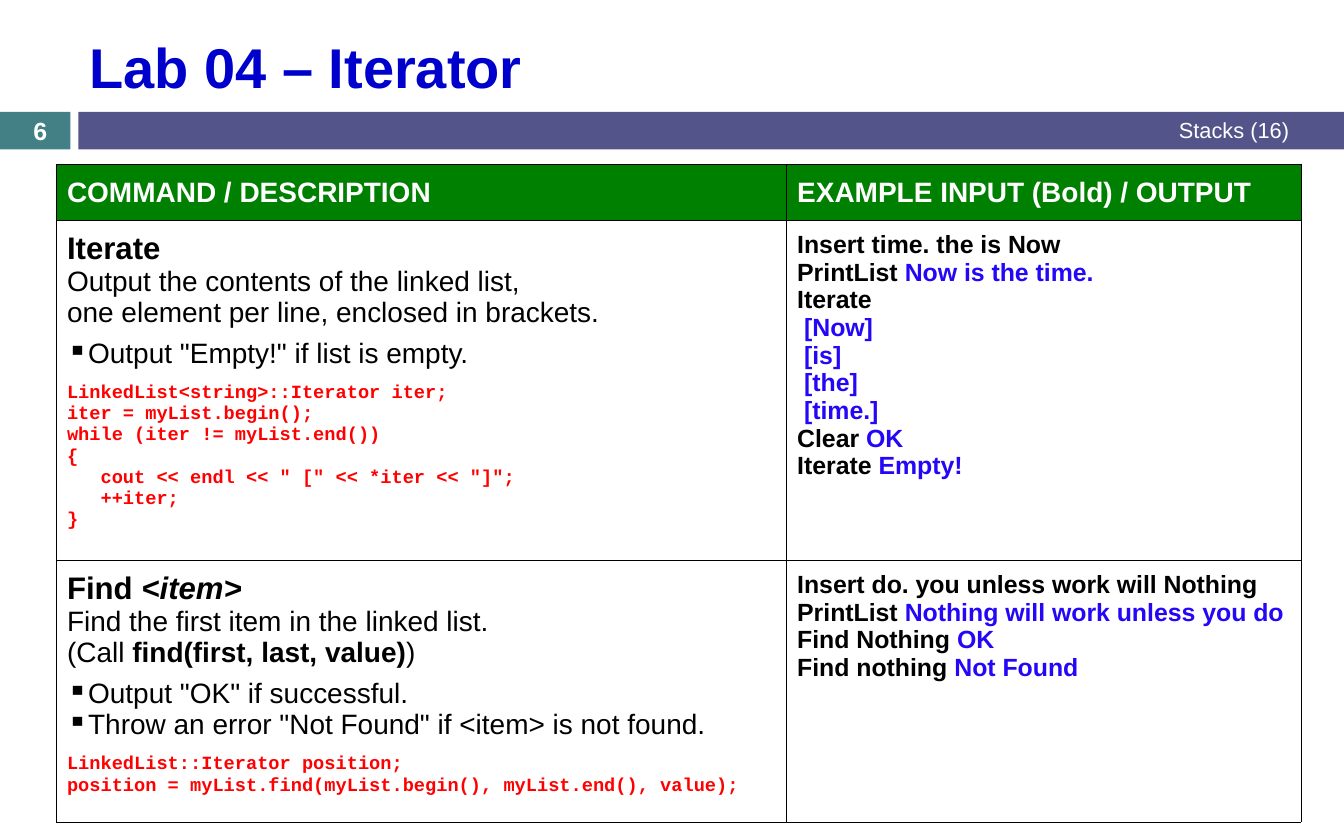
from lxml import etree
from pptx import Presentation
from pptx.dml.color import RGBColor
from pptx.enum import shapes, text
from pptx.oxml import ns
from pptx.util import Cm, Pt

BLACK = RGBColor(0x00, 0x00, 0x00)
WHITE = RGBColor(0xFF, 0xFF, 0xFF)
RED = RGBColor(0xFF, 0x00, 0x00)
GREEN = RGBColor(0x00, 0x80, 0x00)
TITLE_BLUE = RGBColor(0x00, 0x00, 0xCC)
OUTPUT_BLUE = RGBColor(0x24, 0x07, 0xF7)
TEAL = RGBColor(0x43, 0x80, 0x86)
PURPLE = RGBColor(0x53, 0x54, 0x8A)

# Run styles: size, font, colour, bold, italic
STYLES = {
    "title": (36, "Arial", TITLE_BLUE, True, False),
    "section": (14, "Arial", WHITE, False, False),
    "number": (16, "Arial", WHITE, True, False),
    "header": (18, "Arial", WHITE, True, False),
    "command": (20, "Arial", BLACK, True, False),
    "argument": (20, "Arial", BLACK, True, True),
    "body": (18, "Arial", BLACK, False, False),
    "strong": (18, "Arial", BLACK, True, False),
    "code": (12, "Courier New", RED, True, False),
    "input": (16, "Arial", BLACK, True, False),
    "output": (16, "Arial", OUTPUT_BLUE, True, False),
}

# Content: each command has a description, bullets, code and an example session
TITLE, SECTION, NUMBER = "Lab 04 – Iterator", "Stacks (16)", "6"
HEADERS = ["COMMAND / DESCRIPTION", "EXAMPLE INPUT (Bold) / OUTPUT"]
ITERATE = {
    "intro": [("Iterate\n", "command"),
              ("Output the contents of the linked list,\n"
               "one element per line, enclosed in brackets.", "body")],
    "bullets": ['Output "Empty!" if list is empty.'],
    "code": ["LinkedList<string>::Iterator iter;",
             "iter = myList.begin();",
             "while (iter != myList.end())",
             "{",
             '   cout << endl << " [" << *iter << "]";',
             "   ++iter;",
             "}"],
    "session": [("Insert time. the is Now", ""),
                ("PrintList ", "Now is the time."),
                ("Iterate", ""),
                ("", " [Now]"), ("", " [is]"), ("", " [the]"), ("", " [time.]"),
                ("Clear ", "OK"),
                ("Iterate ", "Empty!")],
}
FIND = {
    "intro": [("Find ", "command"), ("<item>\n", "argument"),
              ("Find the first item in the linked list.\n(Call ", "body"),
              ("find(first, last, value)", "strong"), (")", "body")],
    "bullets": ['Output "OK" if successful.',
                'Throw an error "Not Found" if <item> is not found.'],
    "code": ["LinkedList::Iterator position;",
             "position = myList.find(myList.begin(), myList.end(), value);"],
    "session": [("Insert do. you unless work will Nothing", ""),
                ("PrintList ", "Nothing will work unless you do"),
                ("Find Nothing ", "OK"),
                ("Find nothing ", "Not Found")],
}

# Geometry in centimetres
COLUMNS = [16.56, 11.68]
TABLE_LEFT = 1.27
HEADER_HEIGHT = 1.22
BULLET_INDENT = Cm(0.48)


def write(paragraph, spans):
    for words, style in spans:
        size, font, colour, bold, italic = STYLES[style]
        for i, line in enumerate(words.split("\n")):
            if i:
                paragraph.add_line_break()
            if not line:
                continue
            run = paragraph.add_run()
            run.text = line
            run.font.size, run.font.name = Pt(size), font
            run.font.bold, run.font.italic = bold, italic
            run.font.color.rgb = colour


def add_bullet(paragraph):
    props = paragraph._p.get_or_add_pPr()
    props.set("marL", str(BULLET_INDENT))
    props.set("indent", str(-BULLET_INDENT))
    etree.SubElement(props, ns.qn("a:buChar")).set("char", "▪")


def next_paragraph(frame):
    first = frame.paragraphs[0]
    return frame.add_paragraph() if first.runs else first


def add_bar(slide, left, width, colour):
    bar = slide.shapes.add_shape(shapes.MSO_SHAPE.RECTANGLE,
                                 Cm(left), Cm(2.54), Cm(width), Cm(0.85))
    bar.shadow.inherit = False
    bar.fill.solid()
    bar.fill.fore_color.rgb = colour
    bar.line.fill.background()


def add_label(slide, box, words, style, align):
    frame = slide.shapes.add_textbox(*map(Cm, box)).text_frame
    frame.word_wrap = True
    frame.vertical_anchor = text.MSO_ANCHOR.MIDDLE
    frame.paragraphs[0].alignment = align
    write(frame.paragraphs[0], [(words, style)])


def format_cell(cell, fill):
    cell.margin_left = cell.margin_right = Cm(0.25)
    cell.margin_top = cell.margin_bottom = Cm(0.25)
    props = cell._tc.get_or_add_tcPr()
    for side in ("lnL", "lnR", "lnT", "lnB"):
        border = etree.SubElement(props, ns.qn("a:" + side), w=str(Pt(0.3)))
        solid = etree.SubElement(border, ns.qn("a:solidFill"))
        etree.SubElement(solid, ns.qn("a:srgbClr"), val=str(BLACK))
    cell.fill.solid()
    cell.fill.fore_color.rgb = fill


def add_table(slide, top, heights):
    table = slide.shapes.add_table(
        len(heights), len(COLUMNS), Cm(TABLE_LEFT), Cm(top),
        Cm(sum(COLUMNS)), Cm(sum(heights))).table
    table.first_row = table.horz_banding = False
    for column, width in zip(table.columns, COLUMNS):
        column.width = Cm(width)
    for row, height in zip(table.rows, heights):
        row.height = Cm(height)
    return table


def fill_command(row, command):
    description, example = row.cells
    for cell in row.cells:
        format_cell(cell, WHITE)

    frame = description.text_frame
    intro = frame.paragraphs[0]
    write(intro, command["intro"])
    intro.space_after = Pt(6)
    for words in command["bullets"]:
        paragraph = next_paragraph(frame)
        write(paragraph, [(words, "body")])
        add_bullet(paragraph)
    for i, line in enumerate(command["code"]):
        paragraph = next_paragraph(frame)
        write(paragraph, [(line, "code")])
        if i == 0:
            paragraph.space_before = Pt(9)

    for typed, printed in command["session"]:
        write(next_paragraph(example.text_frame),
              [(typed, "input"), (printed, "output")])


def main():
    deck = Presentation()
    deck.slide_width, deck.slide_height = Cm(30.48), Cm(19.05)
    slide = deck.slides.add_slide(deck.slide_layouts[6])

    # Title and band
    add_bar(slide, 0, 1.6, TEAL)
    add_bar(slide, 1.78, 28.7, PURPLE)
    add_label(slide, (1.78, 0.48, 27.71, 2.03), TITLE, "title", text.PP_ALIGN.LEFT)
    add_label(slide, (11.43, 2.51, 18.06, 0.89), SECTION, "section", text.PP_ALIGN.RIGHT)
    add_label(slide, (0, 2.57, 1.83, 0.76), NUMBER, "number", text.PP_ALIGN.CENTER)

    # Iterate table with the header row
    iterate = add_table(slide, 3.73, [HEADER_HEIGHT, 7.3])
    for cell, words in zip(iterate.rows[0].cells, HEADERS):
        format_cell(cell, GREEN)
        cell.vertical_anchor = text.MSO_ANCHOR.MIDDLE
        write(cell.text_frame.paragraphs[0], [(words, "header")])
    fill_command(iterate.rows[1], ITERATE)

    # Find table
    find = add_table(slide, 12.7, [5.62])
    fill_command(find.rows[0], FIND)

    deck.save("out.pptx")


if __name__ == "__main__":
    main()
